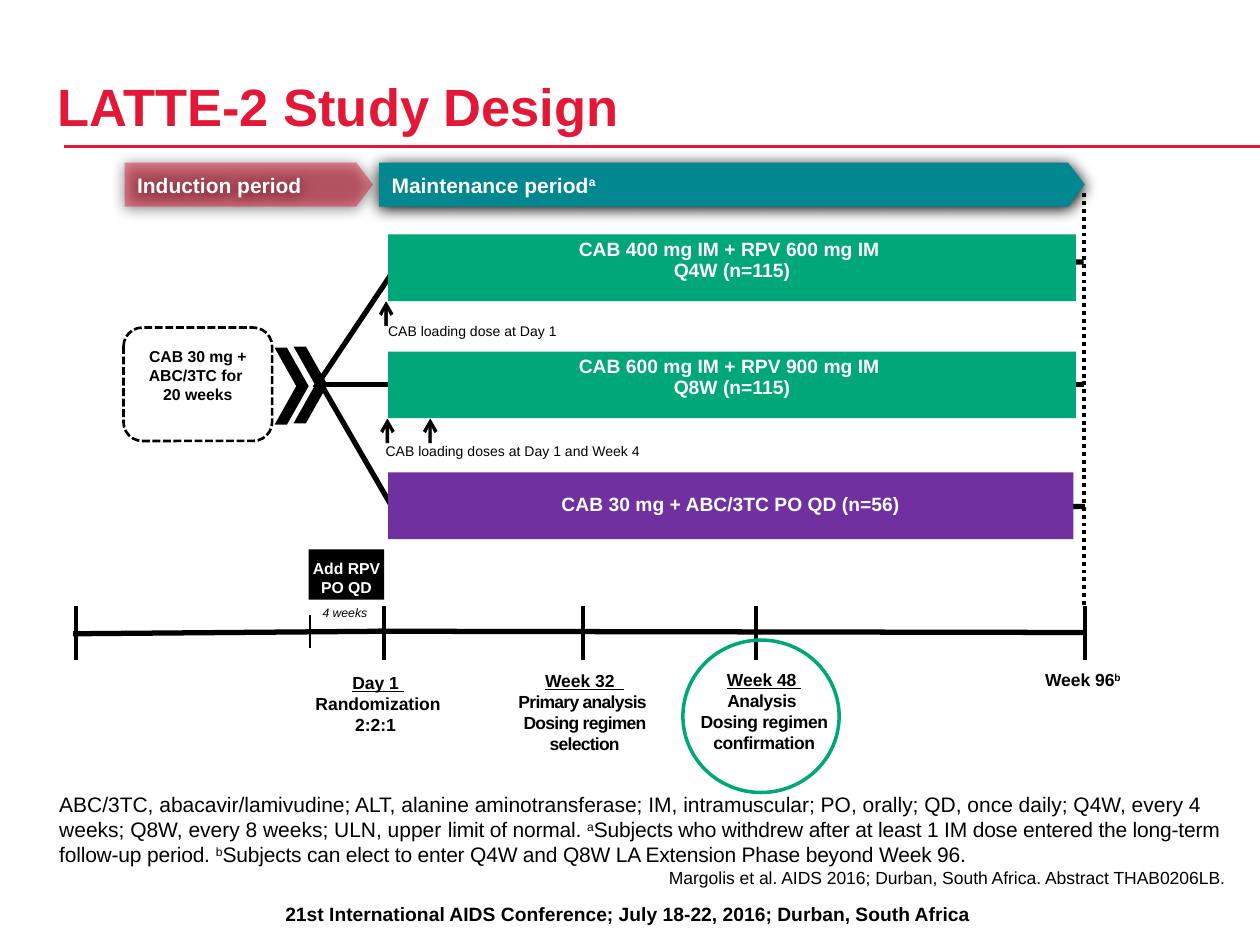
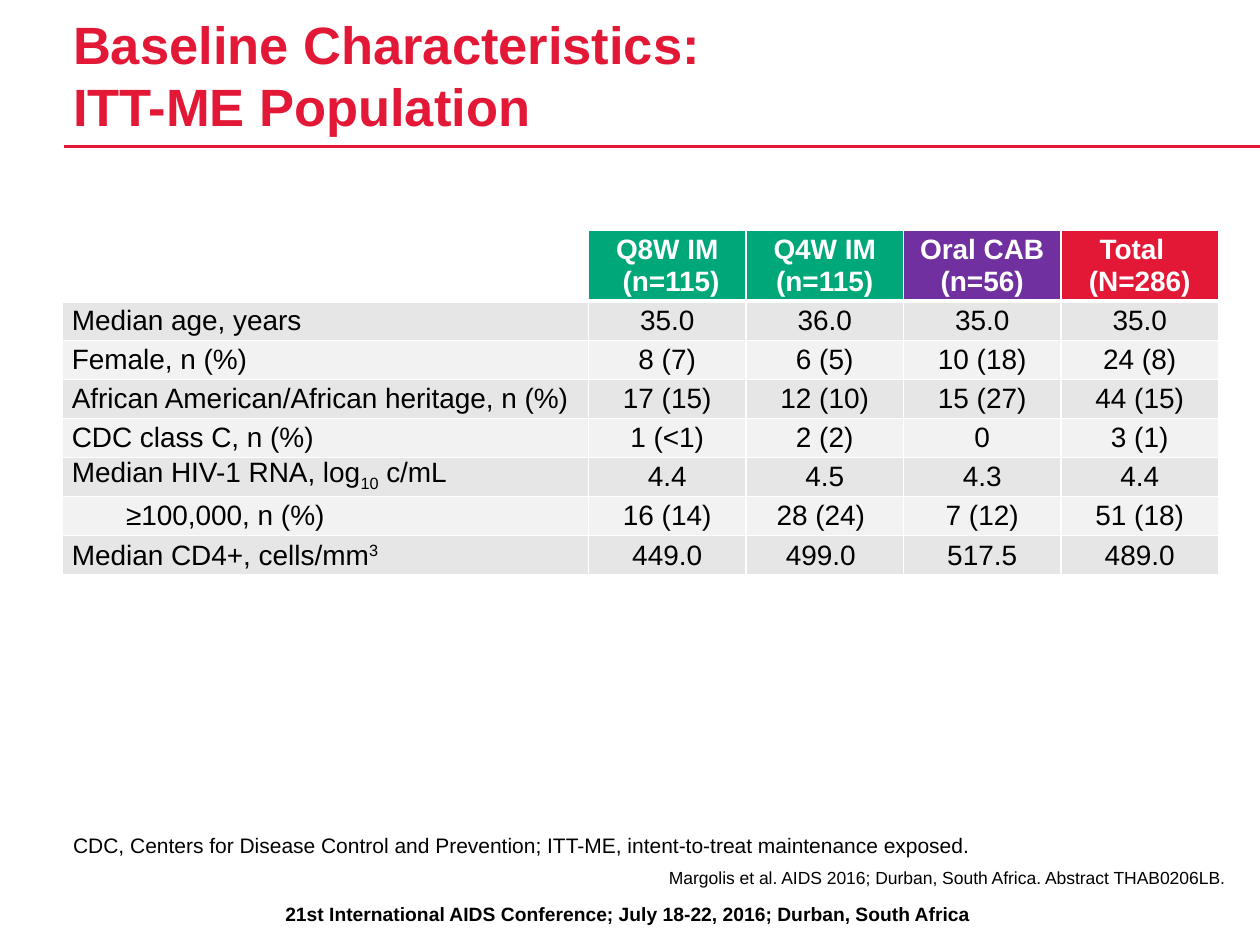
import lxml.etree
import pptx
import pptx.dml.color
import pptx.enum.dml
import pptx.enum.shapes
import pptx.enum.text
import pptx.oxml.ns
import pptx.util

qn = pptx.oxml.ns.qn
rgb = pptx.dml.color.RGBColor.from_string
kinds = pptx.enum.shapes.MSO_SHAPE
aligns = pptx.enum.text.PP_ALIGN
anchors = pptx.enum.text.MSO_ANCHOR
dashes = pptx.enum.dml.MSO_LINE

FONT = "Arial"
RED, GREEN, PURPLE, TEAL = "E31836", "00A779", "7030A0", "008790"
BLACK, WHITE = "000000", "FFFFFF"
CITATION = "Margolis et al. AIDS 2016; Durban, South Africa. Abstract THAB0206LB."
CONFERENCE = "21st International AIDS Conference; July 18-22, 2016; Durban, South Africa"
SUPERSCRIPT = {"baseline": "30000"}
SUBSCRIPT = {"baseline": "-25000"}
UNDERLINE = {"u": "sng"}

presentation = pptx.Presentation()
presentation.slide_width = pptx.util.Inches(10)
presentation.slide_height = pptx.util.Inches(7.5)
# Square grid: 100 columns by 75 rows
unit = presentation.slide_width // 100


def write(frame, paragraphs, size, color=BLACK, bold=False, align=aligns.LEFT,
          anchor=anchors.TOP, margins=(0, 0, 0, 0), spacing=None, indent=0, after=0):
    """Fill a frame; a run is a string or a pair of string and run attributes."""
    frame.word_wrap = True
    frame.auto_size = pptx.enum.text.MSO_AUTO_SIZE.NONE
    frame.vertical_anchor = anchor
    (frame.margin_left, frame.margin_top,
     frame.margin_right, frame.margin_bottom) = [int(margin * unit) for margin in margins]
    for number, runs in enumerate(paragraphs):
        paragraph = frame.add_paragraph() if number else frame.paragraphs[0]
        properties = paragraph._p.get_or_add_pPr()
        properties.set("marL", str(int(indent * unit)))
        properties.set("indent", "0")
        lxml.etree.SubElement(properties, qn("a:buNone"))
        paragraph.alignment = align
        paragraph.space_before = pptx.util.Pt(0)
        paragraph.space_after = pptx.util.Pt(after)
        if spacing:
            paragraph.line_spacing = pptx.util.Pt(spacing)
        for item in runs:
            text, attributes = (item, {}) if isinstance(item, str) else item
            for line_number, line in enumerate(text.split("\n")):
                if line_number:
                    paragraph.add_line_break()
                    lxml.etree.SubElement(paragraph._p[-1], qn("a:rPr"), sz=str(size * 100))
                if not line:
                    continue
                run = paragraph.add_run()
                run.text = line
                run.font.name = FONT
                run.font.size = pptx.util.Pt(size)
                run.font.bold = bold
                run.font.color.rgb = rgb(color)
                for name, value in attributes.items():
                    run._r.get_or_add_rPr().set(name, value)


def add_box(slide, kind, box, fill=None, line=None, width=1):
    """Add a preset shape, or a text box when kind is None; box is in grid units."""
    lengths = [int(length * unit) for length in box]
    if kind is None:
        return slide.shapes.add_textbox(*lengths)
    shape = slide.shapes.add_shape(kind, *lengths)
    shape.shadow.inherit = False
    if fill:
        shape.fill.solid()
        shape.fill.fore_color.rgb = rgb(fill)
    else:
        shape.fill.background()
    if line:
        shape.line.color.rgb = rgb(line)
        shape.line.width = pptx.util.Pt(width)
    else:
        shape.line.fill.background()
    return shape


# Shared parts of both slides: title, footnote, citation, footer
slide_texts = [
    ("LATTE-2 Study Design", (4.55, 1.65, 83.8, 9.2), (4.7, 62.8, 92.5, 6),
     ["ABC/3TC, abacavir/lamivudine; ALT, alanine aminotransferase; IM, intramuscular; "
      "PO, orally; QD, once daily; Q4W, every 4 weeks; Q8W, every 8 weeks; ULN, upper ",
      ("limit of normal. ", {"spc": "-10"}),
      ("a", {"spc": "-10", **SUPERSCRIPT}),
      ("Subjects who withdrew after at least 1 IM dose entered the long-term "
       "follow-up period. ", {"spc": "-10"}),
      ("b", {"spc": "-10", **SUPERSCRIPT}),
      ("Subjects can elect to enter Q4W and Q8W LA Extension Phase beyond Week 96.",
       {"spc": "-10"})]),
    ("Baseline Characteristics: \nITT-ME Population", (5.8, 1.65, 82.5, 9.2),
     (5.8, 64.1, 91.4, 4),
     ["CDC, Centers for Disease Control and Prevention; "
      "ITT-ME, intent-to-treat maintenance exposed."]),
]
slides = []
for title, title_box, footnote_box, footnote in slide_texts:
    slide = presentation.slides.add_slide(presentation.slide_layouts[3])
    slides.append(slide)
    boxes = [title_box, footnote_box, (5.8, 68.8, 91.4, 2)]
    for placeholder, box in zip(slide.placeholders, boxes):
        (placeholder.left, placeholder.top,
         placeholder.width, placeholder.height) = [int(length * unit) for length in box]
    title_shape, footnote_shape, citation_shape = slide.placeholders
    write(title_shape.text_frame, [[title]], 30, RED, True, anchor=anchors.BOTTOM, spacing=35)
    write(footnote_shape.text_frame, [footnote], 12, anchor=anchors.BOTTOM, after=3)
    write(citation_shape.text_frame, [[CITATION]], 10, align=aligns.RIGHT, after=3)
    footer = add_box(slide, None, (0.6, 71.1, 98.5, 2.9))
    write(footer.text_frame, [[CONFERENCE]], 11, bold=True, align=aligns.CENTER,
          margins=(1, 0.5, 1, 0.5))

design, baseline = slides

# Lines: title rules, middle branch, timeline, ticks, end of study
lines = [(slide, (5.1, 11.63, 100, 11.63), RED, 2, None) for slide in slides]
lines += [
    (design, (25.6, 30.5, 86, 30.5), BLACK, 3, None),
    (design, (5.8, 50.3, 30.5, 50.1), BLACK, 3, None),
    (design, (30, 50.1, 86.1, 50.2), BLACK, 3, None),
    (design, (86, 48, 86, 15.3), BLACK, 2.25, dashes.ROUND_DOT),
    (design, (24.6, 48.8, 24.6, 51.4), BLACK, 0.75, None),
]
lines += [(design, (x, 48.1, x, 52.4), BLACK, 2.25, None) for x in (6, 30.5, 46.3, 60, 86.1)]
for slide, ends, color, width, dash in lines:
    connector = slide.shapes.add_connector(
        pptx.enum.shapes.MSO_CONNECTOR.STRAIGHT, *[int(end * unit) for end in ends])
    connector.line.color.rgb = rgb(color)
    connector.line.width = pptx.util.Pt(width)
    if dash:
        connector.line.dash_style = dash
    lxml.etree.SubElement(connector._element.spPr, qn("a:effectLst"))

# Freeforms: outer branches first, hidden in part by the arms, then loading dose arrows
arrow_outline = [(0.55, 0), (1.1, 0.95), (0.9, 1.1), (0.67, 0.6), (0.67, 1.9),
                 (0.43, 1.9), (0.43, 0.6), (0.2, 1.1), (0, 0.95)]
freeforms = [([(25, 30.8), (31.7, 20.8), (86, 20.8)], False),
             ([(25.6, 30.7), (31.1, 40.2), (86.1, 40.2)], False)]
freeforms += [([(left + x, top + y) for x, y in arrow_outline], True)
              for left, top in [(30.1, 23.95), (30.2, 33.25), (33.6, 33.25)]]
for points, is_arrow in freeforms:
    corners = [(int(x * unit), int(y * unit)) for x, y in points]
    builder = design.shapes.build_freeform(*corners[0])
    builder.add_line_segments(corners[1:], close=is_arrow)
    freeform = builder.convert_to_shape()
    freeform.shadow.inherit = False
    if is_arrow:
        freeform.fill.solid()
        freeform.fill.fore_color.rgb = rgb(BLACK)
    else:
        freeform.fill.background()
    freeform.line.color.rgb = rgb(BLACK)
    freeform.line.width = pptx.util.Pt(0.25 if is_arrow else 3)

# Period bands
for left, width, fill, alpha, runs in [
        (9.9, 19.7, RED, 47, ["Induction period"]),
        (30.1, 56, TEAL, 100, ["Maintenance period", ("a", SUPERSCRIPT)])]:
    band = add_box(design, kinds.PENTAGON, (left, 12.9, width, 3.5), fill)
    band.adjustments[0] = 0.379
    if alpha < 100:
        fill_color = band._element.spPr.find(".//" + qn("a:srgbClr"))
        lxml.etree.SubElement(fill_color, qn("a:alpha"), val=str(alpha * 1000))
    shadow = lxml.etree.SubElement(
        band._element.spPr.find(qn("a:effectLst")), qn("a:outerShdw"),
        blurRad=str(pptx.util.Pt(8.5)), dist=str(pptx.util.Pt(1)), dir="5400000",
        algn="ctr", rotWithShape="0")
    lxml.etree.SubElement(shadow, qn("a:srgbClr"), val=BLACK)
    write(band.text_frame, [runs], 12, WHITE, True, anchor=anchors.MIDDLE,
          margins=(1, 0.5, 1, 0.5))

# Treatment arms
for top, width, fill, inset, arm in [
        (18.6, 54.6, GREEN, 0.4, [["CAB 400 mg IM + RPV 600 mg IM "], ["Q4W (n=115)"]]),
        (27.9, 54.6, GREEN, 0.4, [["CAB 600 mg IM + RPV 900 mg IM "], ["Q8W (n=115)"]]),
        (37.5, 54.4, PURPLE, 1.75, [["CAB 30 mg + ABC/3TC PO QD (n=56)"]])]:
    bar = add_box(design, kinds.RECTANGLE, (30.8, top, width, 5.3), fill)
    write(bar.text_frame, arm, 11, WHITE, True, aligns.CENTER,
          margins=(0, inset, 0, 0), spacing=12)

# Induction regimen and double chevron
regimen = add_box(design, kinds.ROUNDED_RECTANGLE, (9.8, 26, 11.8, 9), line=BLACK, width=1.5)
regimen.line.dash_style = dashes.SQUARE_DOT
write(regimen.text_frame, [["CAB 30 mg + ABC/3TC for \n20 weeks"]], 9, bold=True,
      align=aligns.CENTER, margins=(0, 1.1, 0, 0))
for left, top in [(23.3, 27.5), (21.8, 27.6)]:
    chevron = add_box(design, kinds.CHEVRON, (left, top, 2.7, 6.1), BLACK)
    chevron.adjustments[0] = 0.636

# Lead-in with oral RPV
lead_in = add_box(design, kinds.RECTANGLE, (24.5, 43.6, 6, 4), BLACK)
write(lead_in.text_frame, [["Add RPV PO QD"]], 9, WHITE, True, aligns.CENTER,
      margins=(0, 0.75, 0, 0))

# Week 48 highlight
add_box(design, kinds.OVAL, (54.2, 50.8, 12.4, 12.1), line=GREEN, width=2)

# Timeline and dose labels
for box, size, bold, align, paragraphs in [
        ((30.8, 25.6, 14.5, 1.3), 8, False, aligns.LEFT, [["CAB loading dose at Day 1"]]),
        ((30.6, 35.1, 21.5, 1.4), 8, False, aligns.LEFT,
         [["CAB loading doses at Day 1 and Week 4"]]),
        ((25.6, 48, 4.2, 1.2), 7, False, aligns.LEFT, [[("4 weeks", {"i": "1"})]]),
        ((22.5, 53.3, 15, 5.1), 10, True, aligns.CENTER,
         [[("Day 1 ", UNDERLINE), "\nRandomization"], ["2:2:1 "]]),
        ((39.5, 53.2, 13.8, 6.7), 10, True, aligns.CENTER,
         [[("Week 32  ", UNDERLINE),
           ("\nPrimary analysis \nDosing regimen selection", {"spc": "-40"})]]),
        ((53.8, 53.1, 13.7, 6.7), 10, True, aligns.CENTER,
         [[("Week 48 ", UNDERLINE),
           ("\nAnalysis \nDosing regimen confirmation", {"spc": "-20"})]]),
        ((79.2, 53.1, 13.7, 1.7), 10, True, aligns.CENTER,
         [["Week 96", ("b ", SUPERSCRIPT)]])]:
    label = add_box(design, None, box)
    write(label.text_frame, paragraphs, size, bold=bold, align=align)

# Baseline table: each cell is a list of paragraphs
headers = [[], [["Q8W IM"], [" (n=115)"]], [["Q4W IM (n=115)"]],
           [["Oral CAB (n=56)"]], [["Total  "], ["(N=286)"]]]
header_fills = [WHITE, GREEN, GREEN, PURPLE, RED]
measures = [
    (["Median age, years"], "35.0", "36.0", "35.0", "35.0"),
    (["Female, n (%)"], "8 (7)", "6 (5)", "10 (18)", "24 (8)"),
    (["African American/African heritage, n (%)"], "17 (15)", "12 (10)", "15 (27)", "44 (15)"),
    (["CDC class C, n (%)"], "1 (<1)", "2 (2)", "0", "3 (1)"),
    (["Median HIV-1 RNA, log", ("10", SUBSCRIPT), " c/mL"], "4.4", "4.5", "4.3", "4.4"),
    (["≥100,000, n (%)"], "16 (14)", "28 (24) ", "7 (12)", "51 (18)"),
    (["Median CD4+, cells/mm", ("3", SUPERSCRIPT)], "449.0", "499.0 ", "517.5", "489.0"),
]
rows = [headers] + [[[name]] + [[[value]] for value in values] for name, *values in measures]
table_box = [int(length * unit) for length in (4.9, 18.3, 91.8, 27.3)]
table = baseline.shapes.add_table(len(rows), len(headers), *table_box).table
table.horz_banding = False
for column_number, column in enumerate(table.columns):
    column.width = int((12.5 if column_number else 41.8) * unit)
for row_number, row in enumerate(rows):
    is_header = row_number == 0
    table.rows[row_number].height = int((5.6 if is_header else 3.1) * unit)
    for column_number, paragraphs in enumerate(row):
        cell = table.cell(row_number, column_number)
        # White borders, heavier under the header
        for side in "LRTB":
            heavy = (row_number, side) in [(0, "B"), (1, "T")]
            border = lxml.etree.SubElement(
                cell._tc.get_or_add_tcPr(), qn("a:ln" + side),
                w=str(pptx.util.Pt(3 if heavy else 1)))
            border_fill = lxml.etree.SubElement(border, qn("a:solidFill"))
            lxml.etree.SubElement(border_fill, qn("a:srgbClr"), val=WHITE)
        row_fill = "E6E6E6" if row_number % 2 else "F2F2F2"
        cell.fill.solid()
        cell.fill.fore_color.rgb = rgb(header_fills[column_number] if is_header else row_fill)
        cell.margin_left = cell.margin_right = int(0.1 * unit)
        cell.margin_top = cell.margin_bottom = int(0.3 * unit)
        cell.vertical_anchor = anchors.BOTTOM if is_header else anchors.TOP
        is_name = column_number == 0
        indent = (5 if row_number == 6 else 0.7) if is_name else 0
        write(cell.text_frame, paragraphs, 16, WHITE if is_header else BLACK, is_header,
              aligns.LEFT if is_name else aligns.CENTER, cell.vertical_anchor,
              (0.1, 0.3, 0.1, 0.3), 18, indent)

presentation.save("out.pptx")
